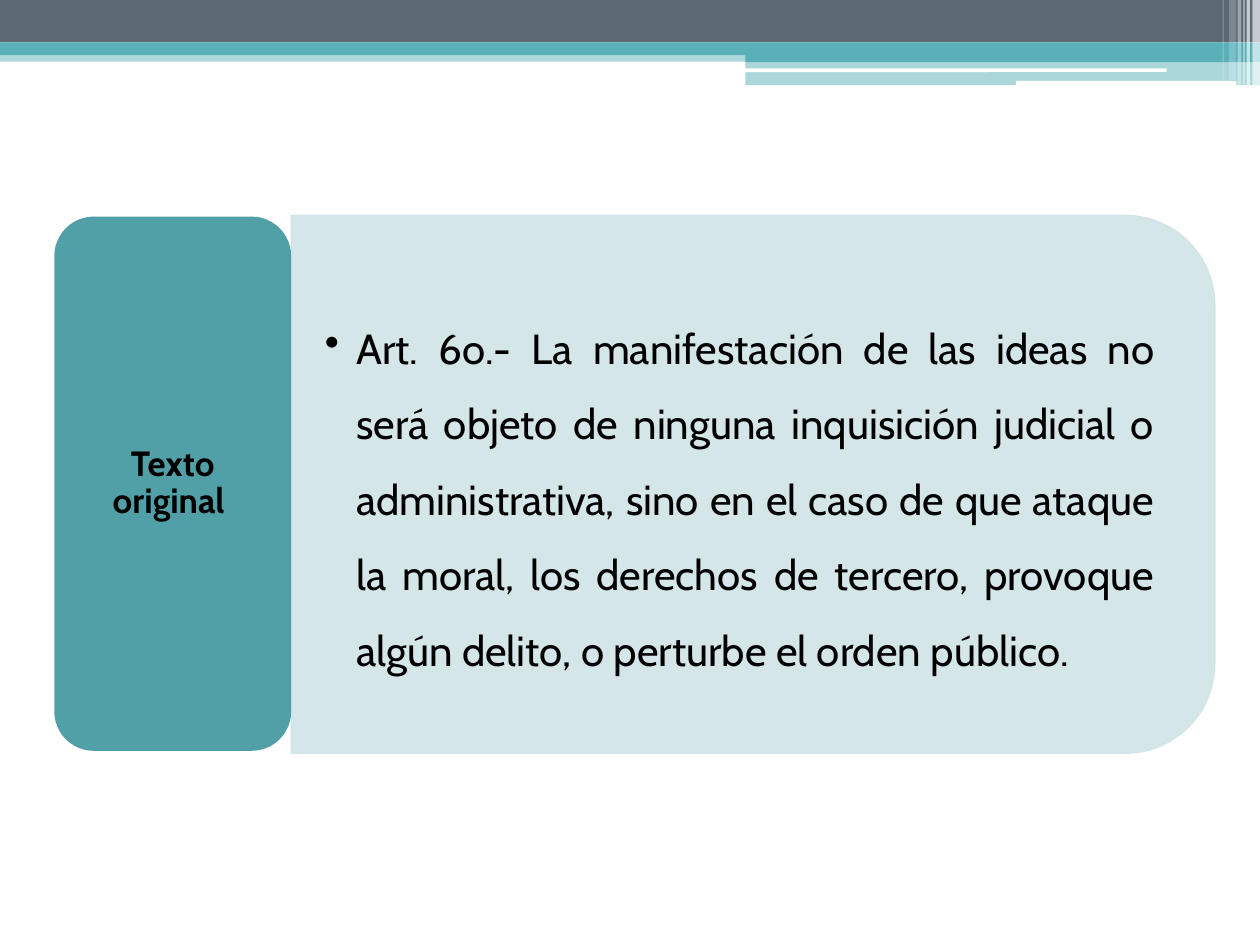
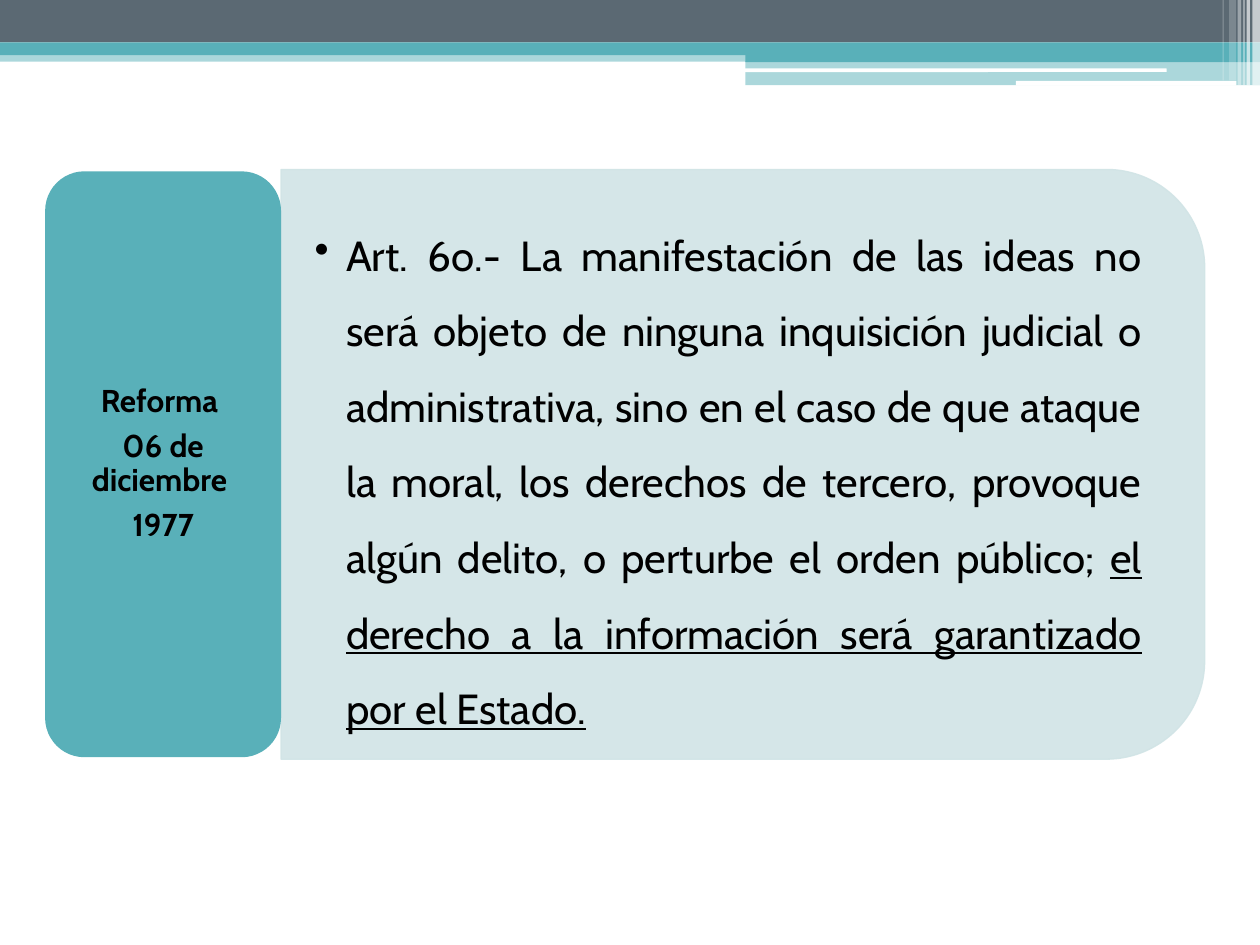
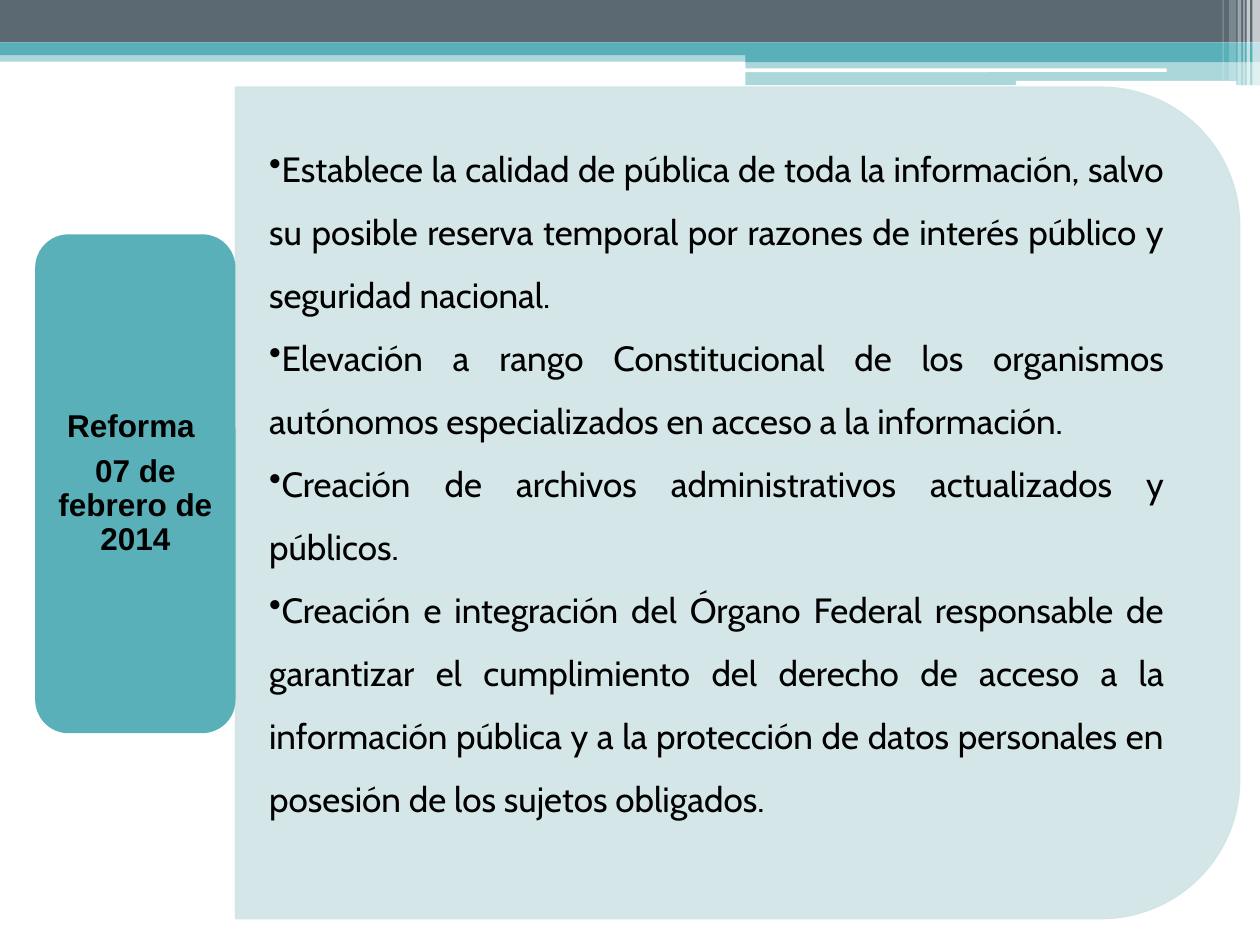
from dataclasses import dataclass

from lxml.etree import SubElement
from pptx import Presentation
from pptx.dml.color import RGBColor
from pptx.enum.shapes import MSO_SHAPE
from pptx.enum.text import MSO_ANCHOR, PP_ALIGN
from pptx.oxml.ns import qn
from pptx.util import Pt


@dataclass(frozen=True)
class Theme:
    slate: str = "5B6973"
    teal: str = "59B0B9"
    deep_teal: str = "51A0A8"
    pale: str = "D1E4E6"
    white: str = "FFFFFF"
    black: str = "000000"
    font: str = "Cabin"
    plain_font: str = "Arial"
    article_size: int = 24
    list_size: int = 20
    original_size: int = 20
    reform_size: int = 18


theme = Theme()
SLIDE_WIDTH, SLIDE_HEIGHT = 720, 540
PANEL_INSET = 19.2

# Content: boxes are left, top, width, height in points
ARTICLE = (
    "Art. 6o.- La manifestación de las ideas no será objeto de ninguna inquisición "
    "judicial o administrativa, sino en el caso de que ataque la moral, los derechos "
    "de tercero, provoque algún delito, o perturbe el orden público"
)
SLIDES = [
    {
        "label": ["Texto original "],
        "label_font": theme.font,
        "label_size": theme.original_size,
        "tab_fill": theme.deep_teal,
        "tab": (31, 123.8, 135.4, 305.3),
        "panel": (166.4, 123.1, 527.8, 307.4),
        "text_top": 169.7,
        "body_size": theme.article_size,
        "hanging": 18,
        "body": [[(ARTICLE + ".", False)]],
    },
    {
        "label": ["Reforma ", "06 de diciembre ", "1977"],
        "label_font": theme.font,
        "label_size": theme.reform_size,
        "tab_fill": theme.teal,
        "tab": (25.8, 97.9, 134.8, 334.8),
        "panel": (160.6, 96.8, 527.8, 337),
        "text_top": 116.6,
        "body_size": theme.article_size,
        "hanging": 18,
        "body": [[
            (ARTICLE + "; ", False),
            ("el derecho a la información será garantizado por el Estado.", True),
        ]],
    },
    {
        "label": ["Reforma ", "07 de febrero de 2014"],
        "label_font": theme.plain_font,
        "label_size": theme.reform_size,
        "tab_fill": theme.teal,
        "tab": (20.1, 133.9, 114.5, 285.1),
        "panel": (134.6, 49.8, 573.8, 475.2),
        "text_top": 72,
        "body_size": theme.list_size,
        "hanging": 0,
        "body": [
            [("Establece la calidad de pública de toda la información, salvo su posible "
              "reserva temporal por razones de interés público y seguridad nacional.", False)],
            [("Elevación a rango Constitucional de los organismos autónomos "
              "especializados en acceso a la información.", False)],
            [("Creación de archivos administrativos actualizados y públicos.", False)],
            [("Creación e integración del Órgano Federal responsable de garantizar el "
              "cumplimiento del derecho de acceso a la información pública y a la "
              "protección de datos personales en posesión de los sujetos obligados.", False)],
        ],
    },
]

# Header: box, colour, opacity in percent
BANDS = [
    ((0, 28.8, 720, 6.5), theme.teal, 50),
    ((0, 0, 720, 24.3), theme.slate, 100),
    ((0, 24.3, 720, 7.2), theme.teal, 100),
    ((426, 28.3, 294, 7.2), theme.teal, 100),
    ((426, 34.9, 294, 13.8), theme.teal, 50),
]
RULES = [(425.5, 39.1, 241.2, 2.1), (580.5, 46.2, 126, 2.7)]
# Vertical stripes: left, width, height, opacity in percent
STRIPES = [
    (715.6, 4.4, 48.8, 65),
    (712.3, 2, 48.8, 65),
    (710.5, 0.7, 48.8, 60),
    (707.2, 2, 48.8, 40),
    (702.3, 4, 46, 20),
    (698.6, 0.7, 46, 30),
]


def set_opacity(color_format, opacity):
    if opacity < 100:
        color = color_format.find(".//" + qn("a:srgbClr"))
        SubElement(color, qn("a:alpha"), val=str(opacity * 1000))


def add_block(slide, kind, box, color, opacity=100):
    shape = slide.shapes.add_shape(kind, *map(Pt, box))
    shape.shadow.inherit = False
    shape.fill.solid()
    shape.fill.fore_color.rgb = RGBColor.from_string(color)
    set_opacity(shape.element.spPr.find(qn("a:solidFill")), opacity)
    shape.line.fill.background()
    return shape


def add_run(paragraph, text, font, size, bold=False, underline=False):
    run = paragraph.add_run()
    run.text = text
    run.font.name, run.font.size = font, Pt(size)
    run.font.bold = bold
    run.font.underline = underline
    run.font.color.rgb = RGBColor.from_string(theme.black)


def prepare_frame(shape, anchor, horizontal, vertical):
    frame = shape.text_frame
    frame.word_wrap = True
    frame.vertical_anchor = anchor
    frame.margin_left = frame.margin_right = Pt(horizontal)
    frame.margin_top = frame.margin_bottom = Pt(vertical)
    return frame


def paragraphs_for(frame, items):
    for index, item in enumerate(items):
        yield (frame.add_paragraph() if index else frame.paragraphs[0]), item


def add_header(slide):
    for box, color, opacity in BANDS:
        add_block(slide, MSO_SHAPE.RECTANGLE, box, color, opacity)
    for box in RULES:
        add_block(slide, MSO_SHAPE.ROUNDED_RECTANGLE, box, theme.white)
    for left, width, height, opacity in STRIPES:
        add_block(slide, MSO_SHAPE.RECTANGLE, (left, 0, width, height), theme.white, opacity)


def add_panel(slide, content):
    # The panel is turned a quarter, so its sides swap around the same centre
    left, top, width, height = content["panel"]
    turned = (left + (width - height) / 2, top + (height - width) / 2, height, width)
    panel = add_block(slide, MSO_SHAPE.ROUND_2_SAME_RECTANGLE, turned, theme.pale, 90)
    panel.rotation = 90
    panel.line.color.rgb = RGBColor.from_string(theme.pale)
    panel.line.width = Pt(0.75)
    set_opacity(panel.element.spPr.find(qn("a:ln")), 90)

    # Text stays clear of the rounded corners
    text_top = content["text_top"]
    box = (left, text_top, width - 0.05 * height, top + height - text_top)
    body = slide.shapes.add_textbox(*map(Pt, box))
    frame = prepare_frame(body, MSO_ANCHOR.TOP, PANEL_INSET, 0)
    for paragraph, runs in paragraphs_for(frame, content["body"]):
        paragraph.alignment = PP_ALIGN.JUSTIFY
        paragraph.line_spacing = 1.5
        properties = paragraph._p.get_or_add_pPr()
        hanging = Pt(content["hanging"])
        properties.set("marL", str(hanging))
        properties.set("indent", str(-hanging))
        SubElement(properties, qn("a:buChar"), char="•")
        for text, underline in runs:
            add_run(paragraph, text, theme.font, content["body_size"], underline=underline)


def add_tab(slide, content):
    tab = add_block(slide, MSO_SHAPE.ROUNDED_RECTANGLE, content["tab"], content["tab_fill"])
    frame = prepare_frame(tab, MSO_ANCHOR.MIDDLE, 5.4, 2.7)
    for paragraph, text in paragraphs_for(frame, content["label"]):
        paragraph.alignment = PP_ALIGN.CENTER
        paragraph.line_spacing = 0.9
        paragraph.space_after = Pt(0.35 * content["label_size"])
        add_run(paragraph, text, content["label_font"], content["label_size"], bold=True)


def main():
    presentation = Presentation()
    presentation.slide_width, presentation.slide_height = Pt(SLIDE_WIDTH), Pt(SLIDE_HEIGHT)
    for content in SLIDES:
        slide = presentation.slides.add_slide(presentation.slide_layouts[6])
        add_header(slide)
        add_panel(slide, content)
        add_tab(slide, content)
    presentation.save("out.pptx")


if __name__ == "__main__":
    main()
